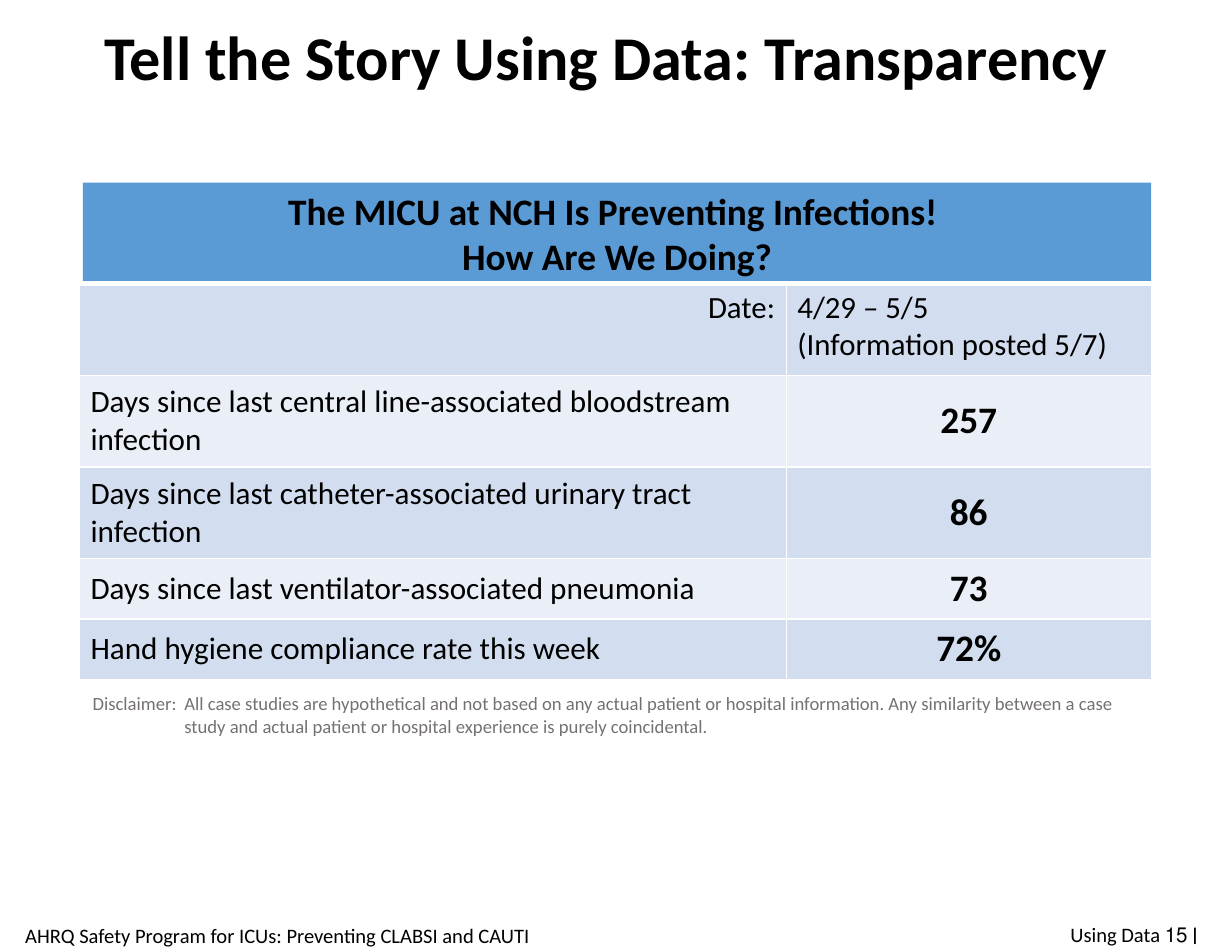
from lxml import etree
from pptx import Presentation
from pptx.dml.color import RGBColor
from pptx.enum.shapes import MSO_SHAPE
from pptx.enum.text import MSO_ANCHOR, MSO_AUTO_SIZE, PP_ALIGN
from pptx.oxml.ns import qn
from pptx.util import Cm, Pt

BLACK = RGBColor(0x00, 0x00, 0x00)
WHITE = RGBColor(0xFF, 0xFF, 0xFF)
GREY = RGBColor(0x76, 0x71, 0x71)
HEADING_BLUE = RGBColor(0x5B, 0x9B, 0xD5)
BAND_DARK = RGBColor(0xD2, 0xDE, 0xEF)
BAND_LIGHT = RGBColor(0xEA, 0xEF, 0xF7)

LEFT, CENTER, RIGHT = PP_ALIGN.LEFT, PP_ALIGN.CENTER, PP_ALIGN.RIGHT
TOP, MIDDLE = MSO_ANCHOR.TOP, MSO_ANCHOR.MIDDLE
NO_AUTOFIT = MSO_AUTO_SIZE.NONE
RECTANGLE = MSO_SHAPE.RECTANGLE
TITLE_ONLY = 5
FONT = "Calibri"

PERIOD = ("Date:", "4/29 – 5/5\n(Information posted 5/7)")
MEASURES = [
    ("Days since last central line-associated bloodstream infection", "257"),
    ("Days since last catheter-associated urinary tract infection", "86"),
    ("Days since last ventilator-associated pneumonia", "73"),
    ("Hand hygiene compliance rate this week", "72%"),
]
COLUMN_WIDTHS = (Cm(16.03), Cm(8.28))
ROW_HEIGHTS = (Cm(2.08), Cm(2.08), Cm(2.08), Cm(1.37), Cm(1.37))


def format_text(frame, size, align=LEFT, bold=False, color=BLACK):
    for paragraph in frame.paragraphs:
        paragraph.alignment = align
        for run in paragraph.runs:
            run.font.name = FONT
            run.font.size = Pt(size)
            run.font.bold = bold
            run.font.color.rgb = color


def add_text(slide, box, text, anchor=TOP):
    frame = slide.shapes.add_textbox(*box).text_frame
    frame.word_wrap = True
    frame.auto_size = NO_AUTOFIT
    frame.vertical_anchor = anchor
    frame.text = text
    return frame


def set_title(slide, box):
    title = slide.shapes.title
    title.left, title.top, title.width, title.height = box
    frame = title.text_frame
    frame.text = "Tell the Story Using Data: Transparency "
    frame.auto_size = NO_AUTOFIT
    frame.vertical_anchor = MIDDLE
    frame.paragraphs[0].line_spacing = 0.9
    format_text(frame, 40, CENTER, bold=True)


def add_heading(slide, box):
    heading = slide.shapes.add_shape(RECTANGLE, *box)
    heading.shadow.inherit = False
    heading.fill.solid()
    heading.fill.fore_color.rgb = HEADING_BLUE
    heading.line.fill.background()
    frame = heading.text_frame
    frame.word_wrap = True
    frame.vertical_anchor = TOP
    frame.text = "The MICU at NCH Is Preventing Infections! \nHow Are We Doing?"
    format_text(frame, 24, CENTER, bold=True)


def set_borders(cell, top_width):
    """Draw white cell borders; they must come before the fill in the XML."""
    properties = cell._tc.get_or_add_tcPr()
    widths = {"a:lnL": 1, "a:lnR": 1, "a:lnT": top_width, "a:lnB": 1}
    for tag, width in widths.items():
        border = etree.SubElement(properties, qn(tag), w=str(Pt(width)))
        fill = etree.SubElement(border, qn("a:solidFill"))
        etree.SubElement(fill, qn("a:srgbClr"), val=str(WHITE))


def fill_cell(cell, text, band, anchor, top_width):
    set_borders(cell, top_width)
    cell.fill.solid()
    cell.fill.fore_color.rgb = band
    cell.vertical_anchor = anchor
    cell.text_frame.text = text


def add_measures_table(slide, left, top):
    rows = [PERIOD, *MEASURES]
    table = slide.shapes.add_table(
        len(rows), len(COLUMN_WIDTHS), left, top, sum(COLUMN_WIDTHS), sum(ROW_HEIGHTS)
    ).table
    for column, width in zip(table.columns, COLUMN_WIDTHS):
        column.width = width
    for index, (texts, height) in enumerate(zip(rows, ROW_HEIGHTS)):
        table.rows[index].height = height
        is_period = index == 0
        band = BAND_LIGHT if index % 2 else BAND_DARK
        label, value = table.rows[index].cells
        for cell, text in zip((label, value), texts):
            fill_cell(cell, text, band, TOP if is_period else MIDDLE, 3 if is_period else 1)
        if is_period:
            format_text(label.text_frame, 19.8, RIGHT)
            format_text(value.text_frame, 19.8)
        else:
            format_text(label.text_frame, 20)
            format_text(value.text_frame, 24, CENTER, bold=True)


def add_disclaimer(slide, box):
    frame = add_text(
        slide, box,
        "Disclaimer: \tAll case studies are hypothetical and not based on any actual "
        "patient or hospital information. Any similarity between a case study and "
        "actual patient or hospital experience is purely coincidental.",
    )
    indent = Cm(2.08)
    properties = frame.paragraphs[0]._p.get_or_add_pPr()
    properties.set("marL", str(indent))
    properties.set("indent", str(-indent))
    format_text(frame, 12, color=GREY)


def add_program_name(slide, box):
    frame = add_text(
        slide, box, "AHRQ Safety Program for ICUs: Preventing CLABSI and CAUTI", MIDDLE
    )
    format_text(frame, 13.2, CENTER)


def add_page_number(slide, box):
    frame = add_text(slide, box, "Using Data ", MIDDLE)
    paragraph = frame.paragraphs[0]
    separator, number = paragraph.add_run(), paragraph.add_run()
    separator.text, number.text = "׀ ", "15"
    format_text(frame, 13.2, RIGHT)
    separator.font.name = "Arial"


def main():
    deck = Presentation()
    deck.slide_width, deck.slide_height = Cm(27.94), Cm(21.59)
    slide = deck.slides.add_slide(deck.slide_layouts[TITLE_ONLY])
    set_title(slide, (Cm(0.64), Cm(-0.03), Cm(26.52), Cm(2.79)))
    add_heading(slide, (Cm(1.88), Cm(4.14), Cm(24.23), Cm(2.31)))
    add_measures_table(slide, Cm(1.8), Cm(6.43))
    add_disclaimer(slide, (Cm(1.85), Cm(15.57), Cm(24.26), Cm(1.27)))
    add_program_name(slide, (Cm(-0.43), Cm(20.7), Cm(13.44), Cm(1.02)))
    add_page_number(slide, (Cm(21.13), Cm(20.57), Cm(6.27), Cm(1.24)))
    deck.save("out.pptx")


if __name__ == "__main__":
    main()
